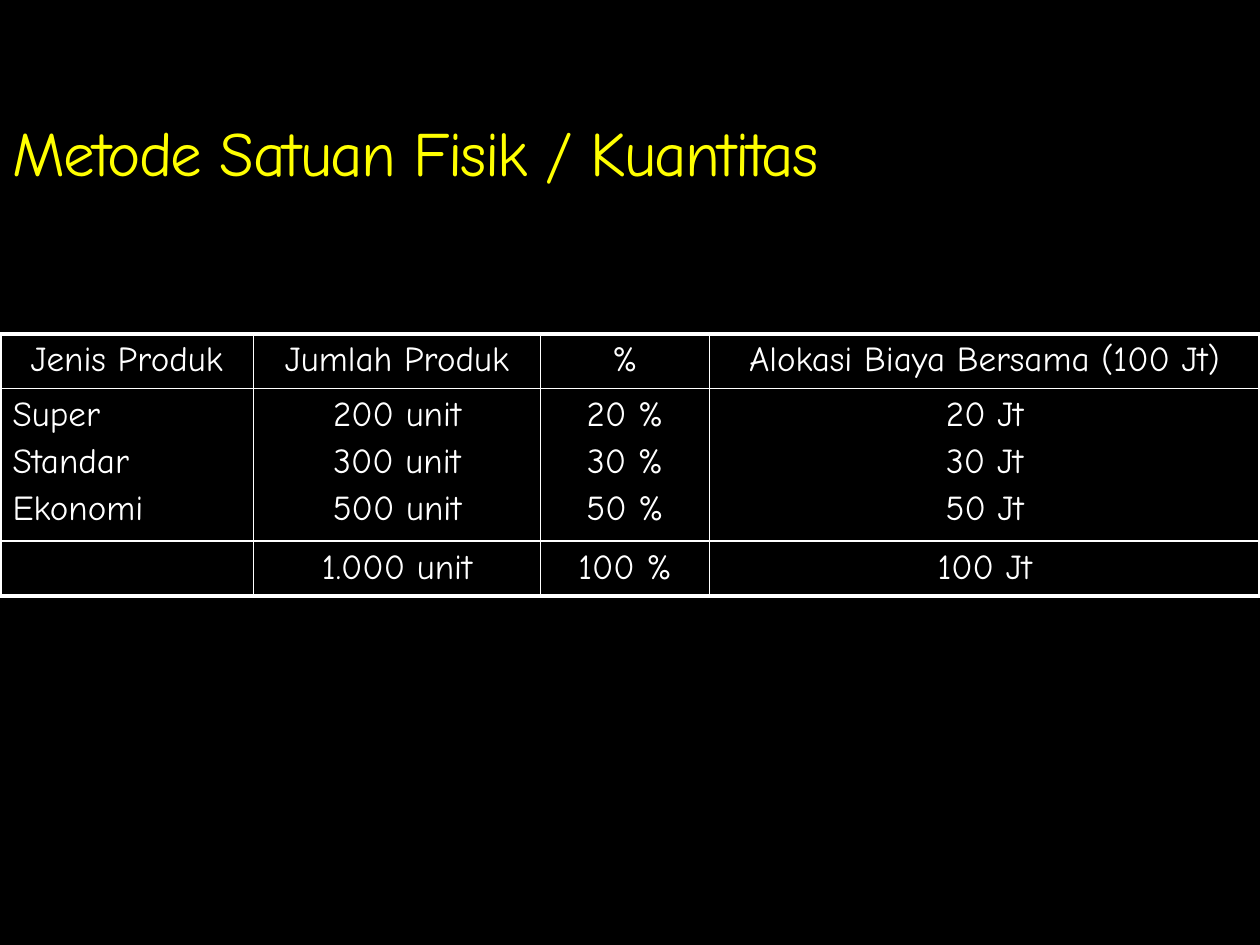
from dataclasses import dataclass

from lxml import etree
from pptx import Presentation
from pptx.dml.color import RGBColor
from pptx.enum.text import MSO_ANCHOR, PP_ALIGN
from pptx.oxml.ns import qn
from pptx.util import Cm, Pt

LEFT, CENTER = PP_ALIGN.LEFT, PP_ALIGN.CENTER
BOTTOM = MSO_ANCHOR.BOTTOM
BLANK_LAYOUT = 6


@dataclass(frozen=True)
class Theme:
    font: str = "Comic Neue"
    background: str = "000000"
    title_color: str = "FFFF00"
    text_color: str = "FFFFFF"
    border_color: str = "FFFFFF"
    title_size: float = 36
    table_size: float = 20
    paragraph_gap: float = 4
    outer_border: float = 2.25
    inner_border: float = 1


THEME = Theme()

COLUMN_WIDTHS = (5.11, 5.79, 3.4, 11.1)
ROW_HEIGHTS = (1.05, 2.97, 1.07)

# Each cell is a list of lines
ALLOCATION = [
    [["Jenis Produk"], ["Jumlah Produk"], ["%"], ["Alokasi Biaya Bersama (100 Jt)"]],
    [
        ["Super", "Standar", "Ekonomi"],
        ["200 unit", "300 unit", "500 unit"],
        ["20 %", "30 %", "50 %"],
        ["20 Jt", "30 Jt", "50 Jt"],
    ],
    [[], ["1.000 unit"], ["100 %"], ["100 Jt"]],
]


def write_text(frame, lines, *, size, color, align=LEFT, gap=0, tracking=0):
    """Fill a text frame with one paragraph per line."""
    for index, line in enumerate(lines):
        paragraph = frame.add_paragraph() if index else frame.paragraphs[0]
        paragraph.alignment = align
        paragraph.space_before = Pt(gap)
        run = paragraph.add_run()
        run.text = line
        run.font.name = THEME.font
        run.font.size = Pt(size)
        run.font.color.rgb = RGBColor.from_string(color)
        if tracking:
            run.font._element.set("spc", str(round(tracking * 100)))


def set_borders(cell, widths):
    """Draw the left, right, top and bottom borders of a cell, in points."""
    properties = cell._tc.get_or_add_tcPr()
    for position, (side, width) in enumerate(zip("LRTB", widths)):
        line = etree.Element(qn(f"a:ln{side}"), w=str(Pt(width)))
        fill = etree.SubElement(line, qn("a:solidFill"))
        etree.SubElement(fill, qn("a:srgbClr"), val=THEME.border_color)
        properties.insert(position, line)


def add_title(slide, title):
    box = slide.shapes.add_textbox(Cm(0), Cm(0.76), Cm(25.4), Cm(3.18))
    box.text_frame.word_wrap = True
    box.text_frame.vertical_anchor = BOTTOM
    write_text(box.text_frame, [title], size=THEME.title_size,
               color=THEME.title_color, tracking=-1)


def add_allocation_table(slide, rows):
    last_row, last_column = len(rows) - 1, len(rows[0]) - 1
    table = slide.shapes.add_table(
        len(rows), len(rows[0]), Cm(0), Cm(6.73),
        Cm(sum(COLUMN_WIDTHS)), Cm(sum(ROW_HEIGHTS))).table
    table.first_row = table.horz_banding = False
    for column, width in zip(table.columns, COLUMN_WIDTHS):
        column.width = Cm(width)
    for row, height in zip(table.rows, ROW_HEIGHTS):
        row.height = Cm(height)

    for r, row in enumerate(rows):
        for c, lines in enumerate(row):
            cell = table.cell(r, c)
            cell.fill.background()
            # Heavier lines around the outside of the table
            outside = (c == 0, c == last_column, r == 0, r == last_row)
            set_borders(cell, [THEME.outer_border if edge else THEME.inner_border
                               for edge in outside])
            # Product names are left-aligned, everything else is centred
            is_product = c == 0 and r > 0
            write_text(cell.text_frame, lines, size=THEME.table_size,
                       color=THEME.text_color, gap=THEME.paragraph_gap,
                       align=LEFT if is_product else CENTER)


def main():
    deck = Presentation()
    deck.slide_width, deck.slide_height = Cm(25.4), Cm(19.05)
    slide = deck.slides.add_slide(deck.slide_layouts[BLANK_LAYOUT])
    slide.background.fill.solid()
    slide.background.fill.fore_color.rgb = RGBColor.from_string(THEME.background)

    add_title(slide, "Metode Satuan Fisik / Kuantitas")
    add_allocation_table(slide, ALLOCATION)
    deck.save("out.pptx")


if __name__ == "__main__":
    main()
